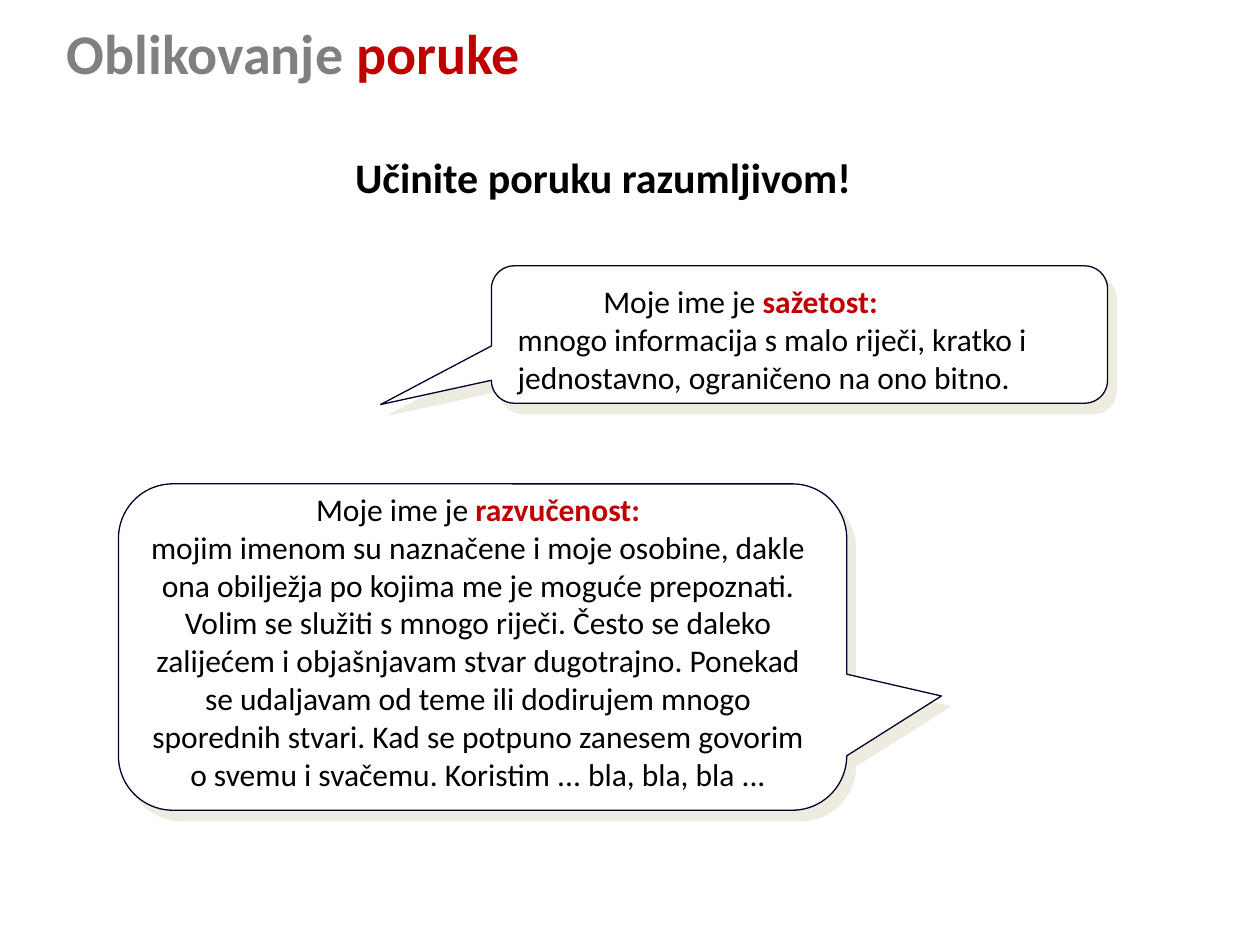
from dataclasses import dataclass

from lxml import etree
from pptx import Presentation
from pptx import util as u
from pptx.dml.color import RGBColor
from pptx.enum import shapes, text
from pptx.oxml import ns


@dataclass(frozen=True)
class Theme:
    font: str = "Calibri"
    ink: str = "000000"
    muted: str = "808080"
    accent: str = "C00000"
    paper: str = "FFFFFF"
    outline: str = "00002A"
    shadow: str = "EEECE1"
    title_size: int = 32
    heading_size: int = 24
    body_size: int = 18


THEME = Theme()
SHADOW_DISTANCE = u.Pt(7.8)
SHADOW_ANGLE = 50


def place(box, left, top, width, height):
    box.left, box.top = u.Inches(left), u.Inches(top)
    box.width, box.height = u.Inches(width), u.Inches(height)


def add_span(para, words, size=THEME.body_size, color=THEME.ink, bold=False):
    span = para.add_run()
    span.text = words
    span.font.name = THEME.font
    span.font.size = u.Pt(size)
    span.font.bold = bold
    span.font.color.rgb = RGBColor.from_string(color)


def add_title(page, plain, stressed):
    box = page.shapes.title
    place(box, 0.43, 0.05, 7.97, 0.72)
    frame = box.text_frame
    frame.vertical_anchor = text.MSO_ANCHOR.MIDDLE
    frame.auto_size = text.MSO_AUTO_SIZE.NONE
    para = frame.paragraphs[0]
    para.alignment = text.PP_ALIGN.LEFT
    add_span(para, plain, size=THEME.title_size, color=THEME.muted, bold=True)
    add_span(para, stressed, size=THEME.title_size, color=THEME.accent, bold=True)


def add_text_box(page, at, align=text.PP_ALIGN.LEFT):
    """Add a wrapping text box and return its frame."""
    frame = page.shapes.add_textbox(*map(u.Inches, at)).text_frame
    frame.word_wrap = True
    frame.auto_size = text.MSO_AUTO_SIZE.SHAPE_TO_FIT_TEXT
    frame.paragraphs[0].alignment = align
    return frame


def add_hard_shadow(shape):
    shape.shadow.inherit = False
    effects = shape._element.spPr.find(ns.qn("a:effectLst"))
    shadow = etree.SubElement(
        effects, ns.qn("a:outerShdw"), dist=str(int(SHADOW_DISTANCE)),
        dir=str(SHADOW_ANGLE * 60000), algn="ctr", rotWithShape="0")
    etree.SubElement(shadow, ns.qn("a:srgbClr"), val=THEME.shadow)


def add_callout(page, at, tip):
    """Add a speech bubble; tip is its point relative to the centre."""
    bubble = page.shapes.add_shape(
        shapes.MSO_SHAPE.ROUNDED_RECTANGULAR_CALLOUT, *map(u.Inches, at))
    bubble.adjustments[0], bubble.adjustments[1] = tip
    bubble.fill.solid()
    bubble.fill.fore_color.rgb = RGBColor.from_string(THEME.paper)
    bubble.line.color.rgb = RGBColor.from_string(THEME.outline)
    bubble.line.width = u.Pt(0.75)
    add_hard_shadow(bubble)


def add_speech(page, at, name, lines, align=text.PP_ALIGN.LEFT, indent=0):
    """Add the introduction with a stressed name, then the lines below."""
    frame = add_text_box(page, at, align=align)
    intro = frame.paragraphs[0]
    if indent:
        intro._p.get_or_add_pPr().set("indent", str(int(u.Inches(indent))))
    add_span(intro, "Moje ime je ")
    add_span(intro, name, color=THEME.accent, bold=True)
    for line in lines:
        para = frame.add_paragraph()
        para.alignment = align
        add_span(para, line)


def main():
    deck = Presentation()
    deck.slide_width, deck.slide_height = u.Inches(10), u.Inches(7.5)
    page = deck.slides.add_slide(deck.slide_layouts.get_by_name("Title Only"))

    # Speech bubbles
    add_callout(page, (0.94, 3.84, 5.78, 2.59), tip=(0.63, 0.15))
    add_callout(page, (3.9, 2.11, 4.89, 1.09), tip=(-0.68, 0.51))

    # Title and heading
    add_title(page, "Oblikovanje ", "poruke")
    heading = add_text_box(page, (2.72, 1.15, 5.03, 0.5))
    add_span(heading.paragraphs[0], "Učinite poruku razumljivom!",
             size=THEME.heading_size, bold=True)

    # Brevity
    add_speech(page, (4.01, 2.19, 4.61, 1.01), "sažetost:", [
        "mnogo informacija s malo riječi, kratko i",
        "jednostavno, ograničeno na ono bitno.",
    ], indent=0.68)

    # Long-windedness
    add_speech(page, (1.02, 3.84, 5.55, 2.52), "razvučenost:", [
        "mojim imenom su naznačene i moje osobine, dakle ona obilježja "
        "po kojima me je moguće prepoznati. Volim se služiti s mnogo "
        "riječi. Često se daleko zalijećem i objašnjavam stvar "
        "dugotrajno. Ponekad se udaljavam od teme ili dodirujem mnogo "
        "sporednih stvari. Kad se potpuno zanesem govorim o svemu i "
        "svačemu. Koristim ... bla, bla, bla ...",
    ], align=text.PP_ALIGN.CENTER)

    deck.save("out.pptx")


if __name__ == "__main__":
    main()
